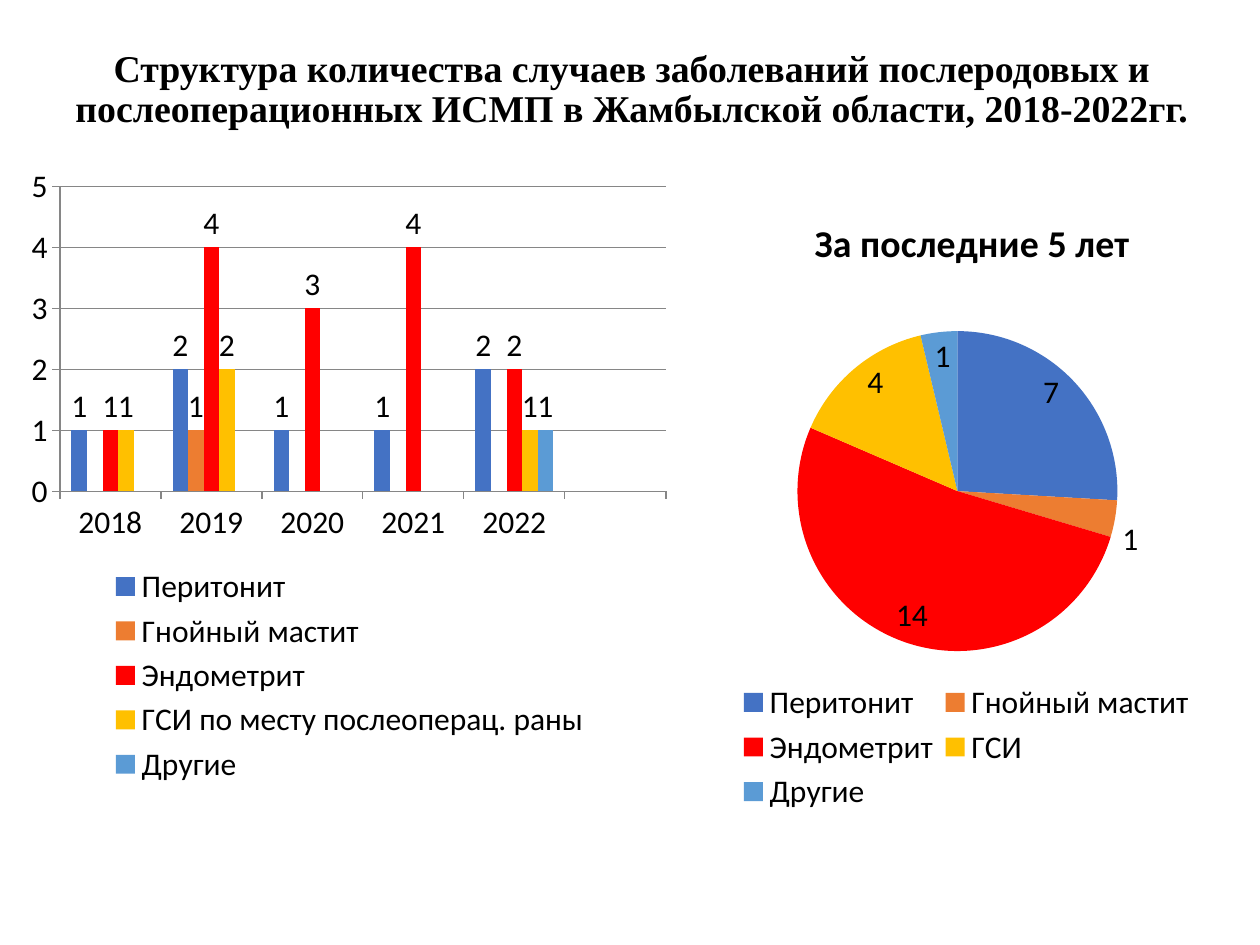
from lxml import etree
from pptx import Presentation
from pptx import util as u
from pptx.chart.data import CategoryChartData
from pptx.dml.color import RGBColor
from pptx.enum import chart as ch
from pptx.enum import text
from pptx.oxml.ns import qn

HEADING = ("Структура количества случаев заболеваний послеродовых и "
           "послеоперационных ИСМП в Жамбылской области, 2018-2022гг.")
PIE_TITLE = "За последние 5 лет"
YEARS = ["2018", "2019", "2020", "2021", "2022", ""]
CASES_BY_YEAR = {
    "Перитонит": [1, 2, 1, 1, 2, None],
    "Гнойный мастит": [None, 1, None, None, None, None],
    "Эндометрит": [1, 4, 3, 4, 2, None],
    "ГСИ по месту послеоперац. раны": [1, 2, None, None, 1, None],
    "Другие": [None, None, None, None, 1, None],
}
CASES_TOTAL = {"Перитонит": 7, "Гнойный мастит": 1, "Эндометрит": 14,
               "ГСИ": 4, "Другие": 1}
DISEASE_COLORS = ["4472C4", "ED7D31", "FF0000", "FFC000", "5B9BD5"]
BLACK, GRID = "000000", "868686"


def rgb(value):
    return RGBColor.from_string(value)


def style(font, name, size, bold=False):
    font.name, font.size, font.bold = name, u.Pt(size), bold
    font.color.rgb = rgb(BLACK)


def place(part, index, x, y, w=None, h=None, inner=False):
    """Lay out a chart part by fractions of the chart frame."""
    for old in part.findall(qn("c:layout")):
        part.remove(old)
    layout = etree.Element(qn("c:layout"))
    manual = etree.SubElement(layout, qn("c:manualLayout"))
    settings = [("layoutTarget", "inner")] if inner else []
    settings += [("xMode", "edge"), ("yMode", "edge"),
                 ("x", x), ("y", y), ("w", w), ("h", h)]
    for tag, value in settings:
        if value is not None:
            etree.SubElement(manual, qn("c:" + tag)).set("val", str(value))
    part.insert(index, layout)


def add_heading(slide):
    box = slide.shapes.add_textbox(u.Cm(0.89), u.Cm(0.51), u.Cm(23.7), u.Cm(2.62))
    frame = box.text_frame
    frame.word_wrap = True
    frame.vertical_anchor = text.MSO_ANCHOR.MIDDLE
    paragraph = frame.paragraphs[0]
    paragraph.alignment = text.PP_ALIGN.CENTER
    paragraph.line_spacing = 0.9
    run = paragraph.add_run()
    run.text = HEADING
    style(run.font, "Times New Roman", 21.6, bold=True)


def add_chart(slide, kind, data, frame, plot_layout, legend_layout):
    """Add a chart with a bottom legend and value labels."""
    chart = slide.shapes.add_chart(kind, *map(u.Cm, frame), data).chart
    style(chart.font, "Calibri", 18)
    chart.has_title = False
    chart.has_legend = True
    chart.legend.position = ch.XL_LEGEND_POSITION.BOTTOM
    chart.legend.include_in_layout = False
    plot = chart.plots[0]
    plot.has_data_labels = True
    plot.data_labels.show_value = True
    style(plot.data_labels.font, "Calibri", 18)
    root = chart.element
    place(root.find(".//" + qn("c:plotArea")), 0, *plot_layout, inner=True)
    place(root.find(".//" + qn("c:legend")), 1, *legend_layout)
    return chart


def add_yearly_columns(slide):
    data = CategoryChartData()
    data.categories = YEARS
    for disease, cases in CASES_BY_YEAR.items():
        data.add_series(disease, cases)
    chart = add_chart(slide, ch.XL_CHART_TYPE.COLUMN_CLUSTERED, data,
                      (0.41, 3.12, 13.28, 12.8),
                      (0.06, 0.05, 0.92, 0.48), (0.13, 0.64, 0.74, 0.36))
    plot = chart.plots[0]
    plot.gap_width, plot.overlap = 150, 0
    plot.vary_by_categories = False
    plot.data_labels.position = ch.XL_LABEL_POSITION.OUTSIDE_END
    for series, color in zip(plot.series, DISEASE_COLORS):
        series.format.fill.solid()
        series.format.fill.fore_color.rgb = rgb(color)
    years, counts = chart.category_axis, chart.value_axis
    counts.minimum_scale, counts.maximum_scale, counts.major_unit = 0, 5, 1
    counts.has_major_gridlines = True
    for axis in (years, counts):
        axis.major_tick_mark = ch.XL_TICK_MARK.OUTSIDE
        style(axis.tick_labels.font, "Calibri", 18)
    for ruled in (years, counts, counts.major_gridlines):
        ruled.format.line.color.rgb = rgb(GRID)
        ruled.format.line.width = u.Pt(0.75)


def add_total_pie(slide):
    data = CategoryChartData()
    data.categories = list(CASES_TOTAL)
    data.add_series(PIE_TITLE, list(CASES_TOTAL.values()))
    chart = add_chart(slide, ch.XL_CHART_TYPE.PIE, data,
                      (13.56, 3.58, 11.84, 12.9),
                      (0.21, 0.24, 0.55, 0.5), (0.1, 0.78, 0.8, 0.22))
    chart.has_title = True
    run = chart.chart_title.text_frame.paragraphs[0].add_run()
    run.text = PIE_TITLE
    style(run.font, "Calibri", 21.6, bold=True)
    chart.chart_title.include_in_layout = False
    place(chart.element.find(".//" + qn("c:title")), 1, 0.23, 0.05)
    plot = chart.plots[0]
    plot.data_labels.position = ch.XL_LABEL_POSITION.BEST_FIT
    for index, color in enumerate(DISEASE_COLORS):
        fill = plot.series[0].points[index].format.fill
        fill.solid()
        fill.fore_color.rgb = rgb(color)


def main():
    deck = Presentation()
    deck.slide_width, deck.slide_height = u.Cm(25.4), u.Cm(19.05)
    slide = deck.slides.add_slide(deck.slide_layouts[6])
    add_heading(slide)
    add_yearly_columns(slide)
    add_total_pie(slide)
    deck.save("out.pptx")


if __name__ == "__main__":
    main()
